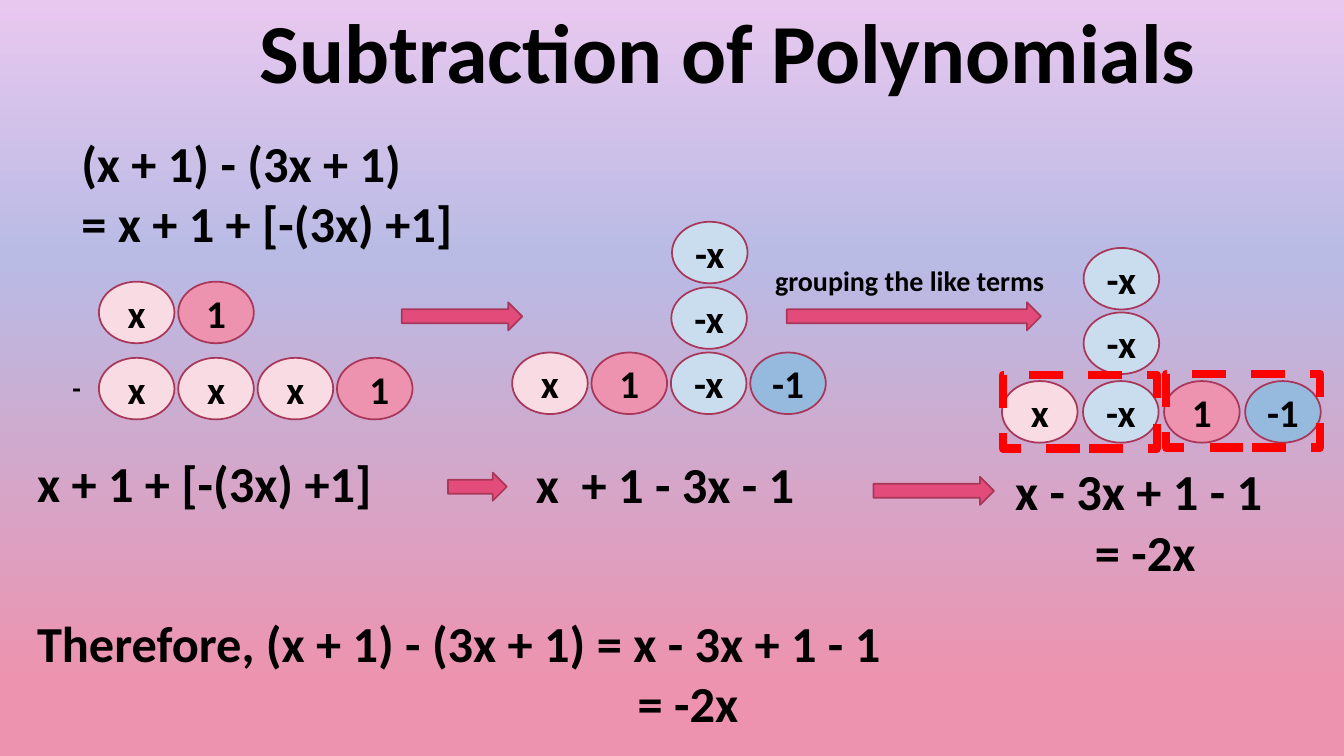
from lxml.etree import SubElement
from copy import deepcopy
from pptx import Presentation
from pptx.dml.color import RGBColor
from pptx.enum.dml import MSO_LINE
from pptx.enum.shapes import MSO_SHAPE
from pptx.enum.text import MSO_ANCHOR, PP_ALIGN
from pptx.oxml.ns import qn
from pptx.util import Pt

COLORS = {
    "sky top": "E9C8EF", "sky middle": "B9BBE5", "sky bottom": "EE93AF",
    "x": "F9DBE4", "1": "EE93AF", "-x": "CADDEF", "-1": "96BADE",
    "outline": "A8375A", "arrow": "E34B7A", "group": "FF0000", "text": "000000",
}
RGB = {name: RGBColor.from_string(value) for name, value in COLORS.items()}


def write(paragraph, text, size):
    paragraph.text = text
    style = {"name": "Calibri", "size": Pt(size), "bold": True}
    for attribute, value in style.items():
        setattr(paragraph.font, attribute, value)
    paragraph.font.color.rgb = RGB["text"]


def draw(kind, left, top, width, height, fill, line, weight):
    part = slide.shapes.add_shape(kind, Pt(left), Pt(top), Pt(width), Pt(height))
    part.shadow.inherit = False
    if fill:
        part.fill.solid()
        part.fill.fore_color.rgb = RGB[fill]
    else:
        part.fill.background()
    part.line.color.rgb = RGB[line]
    part.line.width = Pt(weight)
    return part


deck = Presentation()
deck.slide_width, deck.slide_height = Pt(960), Pt(540)
slide = deck.slides.add_slide(deck.slide_layouts[5])

sky = slide.background.fill
sky.gradient()
sky.gradient_angle = 270
last_stop = sky._fill._gradFill.gsLst[-1]
last_stop.addprevious(deepcopy(last_stop))
for stop, (name, position) in zip(
    sky.gradient_stops, [("sky top", 0), ("sky middle", 0.34), ("sky bottom", 0.91)]
):
    stop.color.rgb = RGB[name]
    stop.position = position

title = slide.shapes.title
place = {"left": 112, "top": -23, "width": 816, "height": 126}
for attribute, value in place.items():
    setattr(title, attribute, Pt(value))
title.text_frame.vertical_anchor = MSO_ANCHOR.MIDDLE
heading = title.text_frame.paragraphs[0]
write(heading, "Subtraction of Polynomials", 60)
heading.alignment = PP_ALIGN.CENTER
heading.line_spacing = 0.9

tile_rows = [
    (70.6, 201.2, 56.7, ["x", "1"]),
    (70.6, 255.6, 56.7, ["x", "x", "x", "1"]),
    (365.8, 251.8, 56.7, ["x", "1", "-x", "-1"]),
    (715.7, 272.2, 57.9, ["x", "-x", "1", "-1"]),
]
tiles = [
    (left + column * step, top, label)
    for left, top, step, labels in tile_rows
    for column, label in enumerate(labels)
]
for left, top in [(480, 158.4), (479.5, 205.2), (774, 177.1), (774, 223.2)]:
    tiles.append((left, top, "-x"))

for left, top, label in tiles:
    tile = draw(MSO_SHAPE.OVAL, left, top, 54, 44, label, "outline", 1.25)
    tile.text_frame.vertical_anchor = MSO_ANCHOR.MIDDLE
    term = tile.text_frame.paragraphs[0]
    write(term, label, 28)
    term.alignment = PP_ALIGN.CENTER
    if (label, top) == ("1", 255.6):
        tile.text_frame.margin_left = Pt(13.5)

for left, top, width in [(287, 216, 86), (562, 216, 181.5), (320, 337.7, 42), (624, 340.6, 86)]:
    draw(MSO_SHAPE.RIGHT_ARROW, left, top, width, 20, "arrow", "outline", 1.25)

for left, top in [(716.4, 267.8), (833, 267.1)]:
    like_terms = draw(MSO_SHAPE.RECTANGLE, left, top, 110, 52.6, None, "group", 6)
    like_terms.line.dash_style = MSO_LINE.DASH

steps = [
    (51, 90.7, 327, 94, 36, [("(x + 1) - (3x + 1)", 0), ("= x + 1 + [-(3x) +1]", 0)]),
    (546.5, 184.3, 214, 32, 20, [("grouping the like terms", 0)]),
    (44.6, 261.4, 27, 32, 20, [("-", 0)]),
    (19.4, 319.7, 291, 51, 36, [("x + 1 + [-(3x) +1]", 0)]),
    (375.8, 320.4, 291, 51, 36, [("x\t+ 1 - 3x - 1", 0)]),
    (718, 325.4, 240, 94, 36, [("x - 3x + 1 - 1", 0), ("= -2x", 57)]),
    (19.4, 433.4, 759, 94, 36,
     [("Therefore, (x + 1) - (3x + 1) = x - 3x + 1 - 1", 0), ("= -2x", 429)]),
]
for left, top, width, height, size, lines in steps:
    step = slide.shapes.add_textbox(Pt(left), Pt(top), Pt(width), Pt(height)).text_frame
    step.word_wrap = True
    for index, (text, indent) in enumerate(lines):
        line = step.add_paragraph() if index else step.paragraphs[0]
        properties = line._p.get_or_add_pPr()
        if indent:
            properties.set("marL", str(Pt(indent)))
        if "\t" in text:
            tabs = SubElement(properties, qn("a:tabLst"))
            SubElement(tabs, qn("a:tab"), pos=str(Pt(32.6)), algn="l")
        write(line, text, size)

deck.save("out.pptx")
